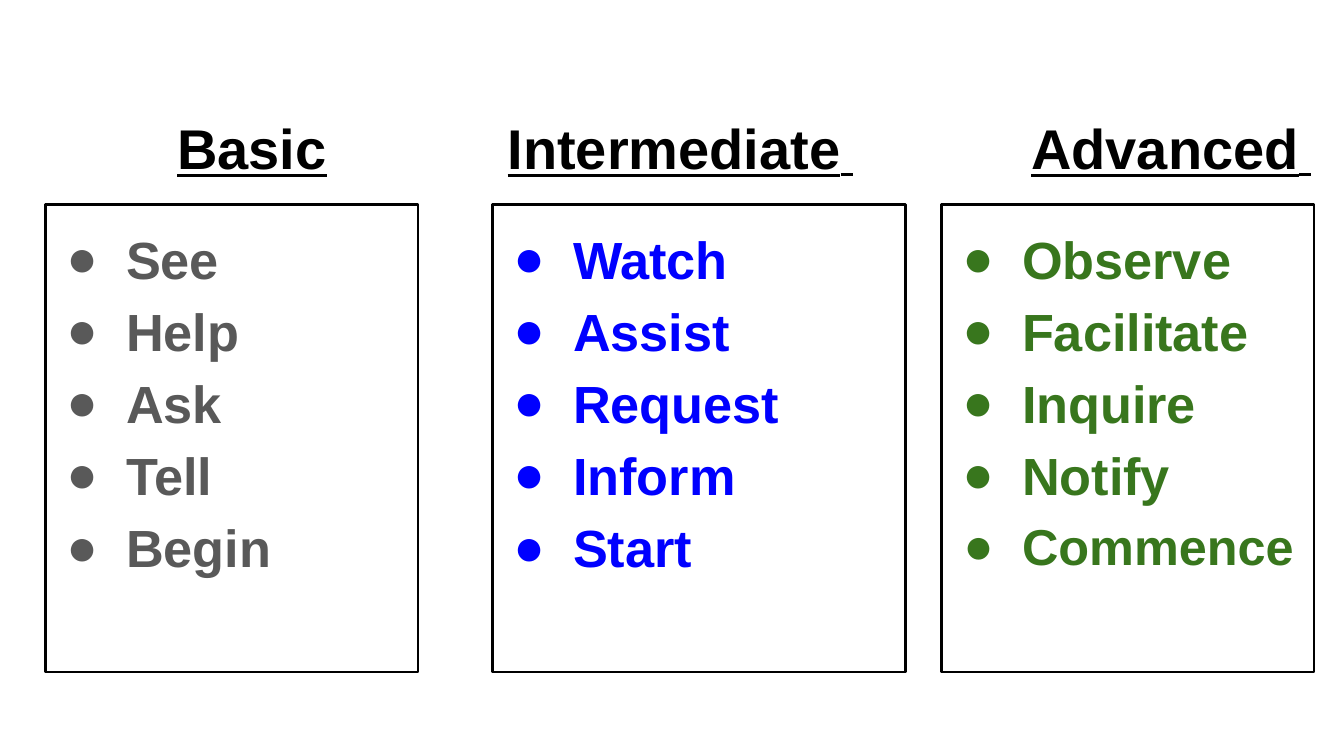
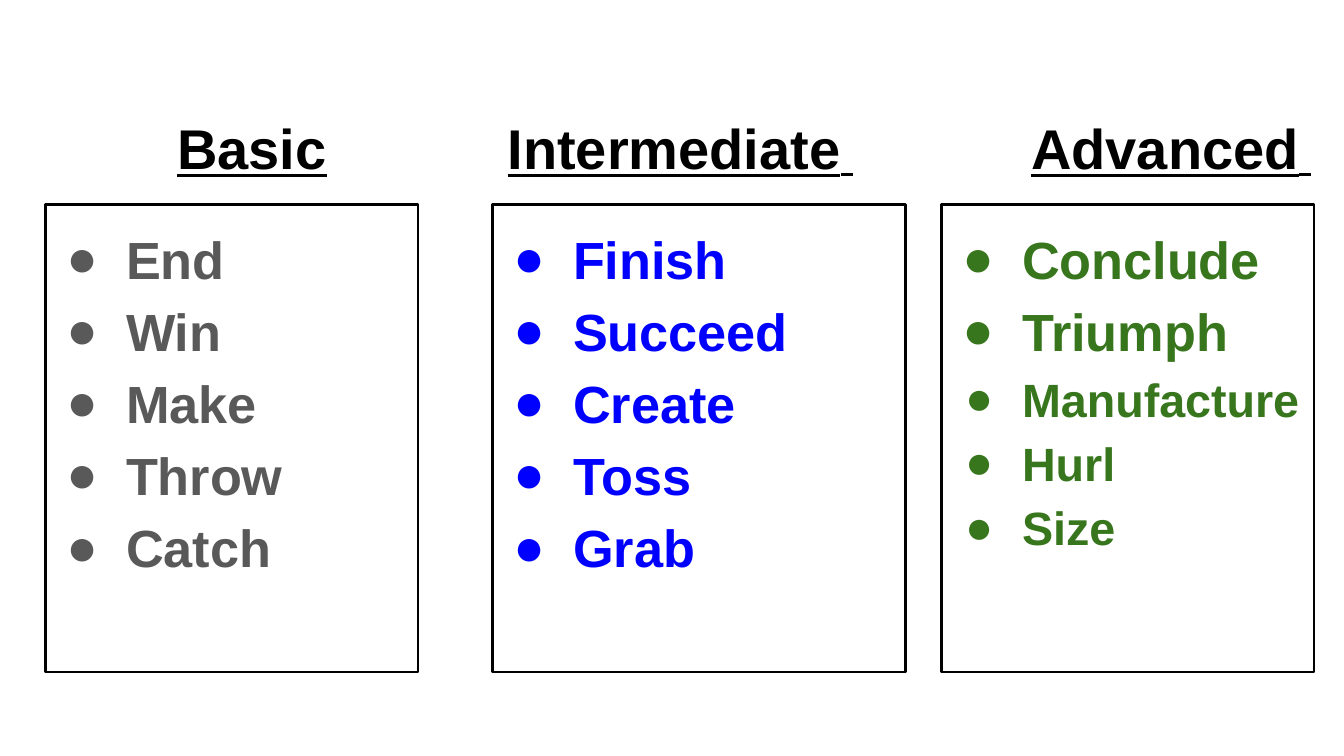
import dataclasses

import pptx
import pptx.dml.color
import pptx.enum.shapes
import pptx.enum.text
import pptx.util
from lxml import etree
from pptx.dml.color import RGBColor
from pptx.oxml.ns import qn
from pptx.util import Pt

BLACK = RGBColor(0x00, 0x00, 0x00)
WHITE = RGBColor(0xFF, 0xFF, 0xFF)
GRAY = RGBColor(0x59, 0x59, 0x59)
BLUE = RGBColor(0x00, 0x00, 0xFF)
GREEN = RGBColor(0x38, 0x76, 0x1D)

FONT = "Arial"
HEADING_SIZE = 30
HEADING_TAIL_SIZE = 24
WORD_SIZE = 28
SMALLER_WORDS = {"Commence": 27, "Manufacture": 25, "Hurl": 25, "Size": 25}
INSET = 7.2
HEADING_TOP, HEADING_WIDTH, HEADING_HEIGHT = 44, 221, 60
BOX_TOP, BOX_HEIGHT = 109.5, 250.5


@dataclasses.dataclass
class Level:
    heading: str
    heading_left: float
    box_left: float
    box_width: float
    color: RGBColor
    tail: str = ""


LEVELS = (
    Level("Basic", 24.5, 24.5, 199.5, GRAY),
    Level("Intermediate", 254, 264, 221, BLUE, " "),
    Level("Advanced", 517, 504.5, 199.5, GREEN, " "),
)

WORD_SETS = (
    (
        ("See", "Help", "Ask", "Tell", "Begin"),
        ("Watch", "Assist", "Request", "Inform", "Start"),
        ("Observe", "Facilitate", "Inquire", "Notify", "Commence"),
    ),
    (
        ("End", "Win", "Make", "Throw", "Catch"),
        ("Finish", "Succeed", "Create", "Toss", "Grab"),
        ("Conclude", "Triumph", "Manufacture", "Hurl", "Size"),
    ),
)


def add_text(paragraph, text, size, color=BLACK, underline=False):
    run = paragraph.add_run()
    run.text = text
    run.font.name = FONT
    run.font.size = Pt(size)
    run.font.bold = True
    run.font.underline = underline
    run.font.color.rgb = color


def prepare_frame(shape, anchor):
    frame = shape.text_frame
    frame.word_wrap = True
    frame.auto_size = pptx.enum.text.MSO_AUTO_SIZE.NONE
    frame.vertical_anchor = anchor
    frame.margin_left = frame.margin_right = Pt(INSET)
    frame.margin_top = frame.margin_bottom = Pt(INSET)
    return frame


def format_heading(shape, level):
    shape.left, shape.top = Pt(level.heading_left), Pt(HEADING_TOP)
    shape.width, shape.height = Pt(HEADING_WIDTH), Pt(HEADING_HEIGHT)
    frame = prepare_frame(shape, pptx.enum.text.MSO_ANCHOR.BOTTOM)
    paragraph = frame.paragraphs[0]
    paragraph.alignment = pptx.enum.text.PP_ALIGN.CENTER
    add_text(paragraph, level.heading, HEADING_SIZE, underline=True)
    if level.tail:
        add_text(paragraph, level.tail, HEADING_TAIL_SIZE, underline=True)


def set_bullet(paragraph, size, color):
    properties = paragraph._p.get_or_add_pPr()
    properties.set("marL", str(Pt(36)))
    properties.set("indent", str(-Pt(18 + size / 2)))
    bullet_color = etree.SubElement(properties, qn("a:buClr"))
    etree.SubElement(bullet_color, qn("a:srgbClr"), val=str(color))
    etree.SubElement(properties, qn("a:buFont"), typeface=FONT)
    etree.SubElement(properties, qn("a:buChar"), char="●")


def add_word_box(slide, level, words):
    shape = slide.shapes.add_shape(
        pptx.enum.shapes.MSO_SHAPE.RECTANGLE,
        Pt(level.box_left), Pt(BOX_TOP), Pt(level.box_width), Pt(BOX_HEIGHT),
    )
    shape.shadow.inherit = False
    shape.fill.background()
    shape.line.color.rgb = BLACK
    shape.line.width = Pt(1.5)
    frame = prepare_frame(shape, pptx.enum.text.MSO_ANCHOR.TOP)
    for index, word in enumerate(words):
        paragraph = frame.add_paragraph() if index else frame.paragraphs[0]
        size = SMALLER_WORDS.get(word, WORD_SIZE)
        set_bullet(paragraph, size, level.color)
        paragraph.alignment = pptx.enum.text.PP_ALIGN.LEFT
        paragraph.line_spacing = 1.15
        add_text(paragraph, word, size, color=level.color)


def add_word_slide(presentation, word_set):
    slide = presentation.slides.add_slide(presentation.slide_layouts[5])
    slide.background.fill.solid()
    slide.background.fill.fore_color.rgb = WHITE
    for index, (level, words) in enumerate(zip(LEVELS, word_set)):
        heading = slide.shapes.add_textbox(0, 0, 0, 0) if index else slide.shapes.title
        format_heading(heading, level)
        add_word_box(slide, level, words)


def main():
    presentation = pptx.Presentation()
    presentation.slide_width = Pt(720)
    presentation.slide_height = Pt(405)
    for word_set in WORD_SETS:
        add_word_slide(presentation, word_set)
    presentation.save("out.pptx")


if __name__ == "__main__":
    main()
